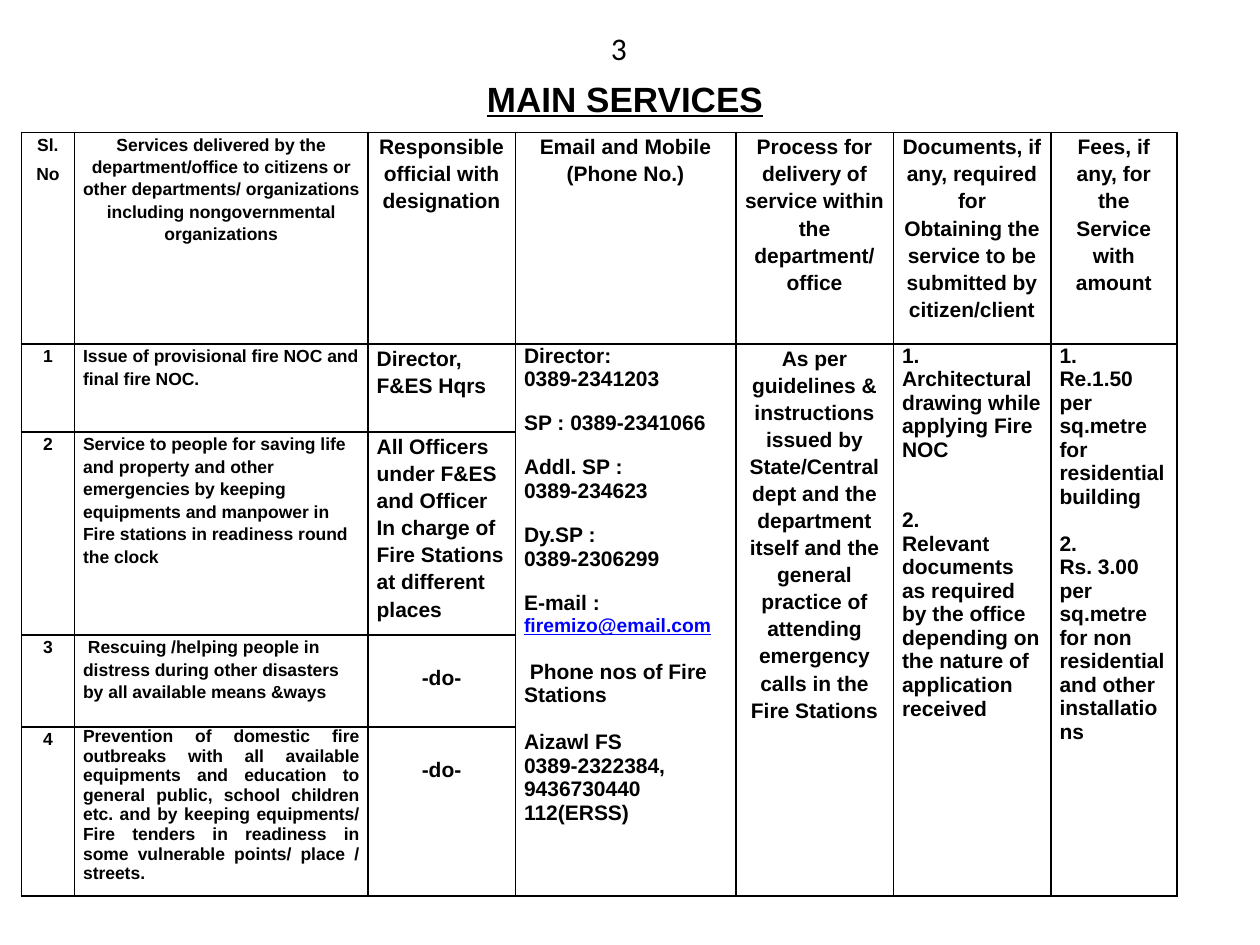
from lxml import etree
from pptx import Presentation
from pptx.dml.color import RGBColor
from pptx.enum.text import MSO_ANCHOR, MSO_AUTO_SIZE, PP_ALIGN
from pptx.oxml.ns import qn
from pptx.util import Inches, Pt

LEFT, CENTER, JUSTIFY = PP_ALIGN.LEFT, PP_ALIGN.CENTER, PP_ALIGN.JUSTIFY
TOP, MIDDLE = MSO_ANCHOR.TOP, MSO_ANCHOR.MIDDLE
FIT_SHAPE = MSO_AUTO_SIZE.SHAPE_TO_FIT_TEXT
BLACK, BLUE = "000000", "0000FF"
EMAIL = "firemizo@email.com"


def write(paragraph, text, color=BLACK, **font_format):
    run = paragraph.add_run()
    run.text = text
    run.font.color.rgb = RGBColor.from_string(color)
    for name, value in font_format.items():
        setattr(run.font, name, value)


def add_borders(cell, color=BLACK, width=Pt(1)):
    properties = cell._tc.get_or_add_tcPr()
    for position, side in enumerate(("lnL", "lnR", "lnT", "lnB")):
        line = etree.Element(qn(f"a:{side}"), w=str(width))
        fill = etree.SubElement(line, qn("a:solidFill"))
        etree.SubElement(fill, qn("a:srgbClr"), val=color)
        properties.insert(position, line)


presentation = Presentation()
presentation.slide_width, presentation.slide_height = Inches(10), Inches(7.5)
slide = presentation.slides.add_slide(presentation.slide_layouts[5])

# Title
title = slide.shapes.title
title.left, title.top = Inches(3.5), Inches(0.56)
title.width, title.height = Inches(2.92), Inches(0.44)
title.text_frame.vertical_anchor = MIDDLE
title.text_frame.auto_size = FIT_SHAPE
title_paragraph = title.text_frame.paragraphs[0]
title_paragraph.alignment = CENTER
write(title_paragraph, "MAIN SERVICES", size=Pt(20), name="Arial", bold=True, underline=True)

# Table wording: each cell holds paragraphs, a pair adds a gap in points above
headers = [
    ["Sl.", "No"],
    ["Services delivered by the department/office to citizens or other departments/ "
     "organizations including nongovernmental organizations"],
    ["Responsible official with designation"],
    ["Email and Mobile", "(Phone No.)"],
    ["Process for delivery of service within the", "department/ office"],
    ["Documents, if any, required for",
     "Obtaining the service to be submitted by citizen/client"],
    ["Fees, if any, for the", "Service with amount"],
]
services = [
    ("Issue of provisional fire NOC and final fire NOC.", "Director, F&ES Hqrs"),
    ("Service to people for saving life and property and other emergencies by keeping "
     "equipments and manpower in Fire stations in readiness round the clock",
     "All Officers under F&ES and Officer In charge of Fire Stations at different places"),
    (" Rescuing /helping people in distress during other disasters by all available "
     "means &ways", "-do-"),
    ("Prevention of domestic fire outbreaks with all available equipments and education "
     "to general public, school children etc. and by keeping equipments/ Fire tenders in "
     "readiness in some vulnerable points/ place / streets.", "-do-"),
]
shared_columns = {
    3: ["Director:", "0389-2341203", ("SP : 0389-2341066", 11.5),
        ("Addl. SP :", 12), "0389-234623", ("Dy.SP :", 12), "0389-2306299",
        ("E-mail :", 12), EMAIL, (" Phone nos of Fire Stations", 13.5),
        ("Aizawl FS", 13.5), "0389-2322384,", "9436730440", "112(ERSS)"],
    4: ["As per guidelines & instructions issued by State/Central dept and the department "
        "itself and the general practice of attending emergency calls in the Fire Stations"],
    5: ["1. Architectural drawing while applying Fire NOC", ("2.", 27),
        "Relevant documents as required by the office depending on the nature of "
        "application received"],
    6: ["1.", "Re.1.50 per sq.metre for residential building", ("2.", 13.5),
        "Rs. 3.00 per sq.metre for non residential and other installations"],
}
contents = {(0, column): header for column, header in enumerate(headers)}
for row, (service, official) in enumerate(services, start=1):
    for column, text in enumerate((str(row), service, official)):
        contents[row, column] = [text]
for column, paragraphs in shared_columns.items():
    contents[1, column] = paragraphs

# Table grid
column_widths = [0.42, 2.33, 1.17, 1.75, 1.25, 1.25, 1]
row_heights = [1.68, 0.7, 1.6, 0.73, 1.34]
table = slide.shapes.add_table(
    len(row_heights), len(column_widths), Inches(0.17), Inches(1.05),
    Inches(sum(column_widths)), Inches(sum(row_heights))).table
table.first_row = table.horz_banding = False
for column, width in zip(table.columns, column_widths):
    column.width = Inches(width)
for row, height in zip(table.rows, row_heights):
    row.height = Inches(height)
for column in shared_columns:
    table.cell(1, column).merge(table.cell(len(services), column))
for cell in table.iter_cells():
    cell.fill.background()
    add_borders(cell)

# Table text
for (row, column), paragraphs in contents.items():
    cell = table.cell(row, column)
    repeated = paragraphs == ["-do-"]
    cell_format = {"margin_left": Inches(0.07), "margin_right": Inches(0.07),
                   "margin_top": Inches(0.22 if repeated else 0),
                   "margin_bottom": 0, "vertical_anchor": TOP}
    for name, value in cell_format.items():
        setattr(cell, name, value)
    justified = (row, column) == (4, 1)
    centered = row == 0 or column in (0, 4) or repeated
    single_spaced = justified or (row > 0 and column in (3, 5, 6))
    for index, entry in enumerate(paragraphs):
        text, gap = entry if isinstance(entry, tuple) else (entry, 0)
        frame = cell.text_frame
        paragraph = frame.add_paragraph() if index else frame.paragraphs[0]
        paragraph.alignment = JUSTIFY if justified else CENTER if centered else LEFT
        paragraph.line_spacing = 1.5 if text == "No" else 1.0 if single_spaced else 1.15
        paragraph.space_before = Pt(gap)
        is_email = text == EMAIL
        size = 10 if column < 2 else 11 if is_email else 12
        write(paragraph, text, BLUE if is_email else BLACK,
              size=Pt(size), name="Arial", bold=True, underline=is_email)

# Page number
page_number = slide.shapes.add_textbox(Inches(4.75), Inches(0.18), Inches(0.33), Inches(0.4))
page_number.text_frame.word_wrap = False
page_number.text_frame.auto_size = FIT_SHAPE
write(page_number.text_frame.paragraphs[0], "3", size=Pt(18), name="Calibri")

presentation.save("out.pptx")
